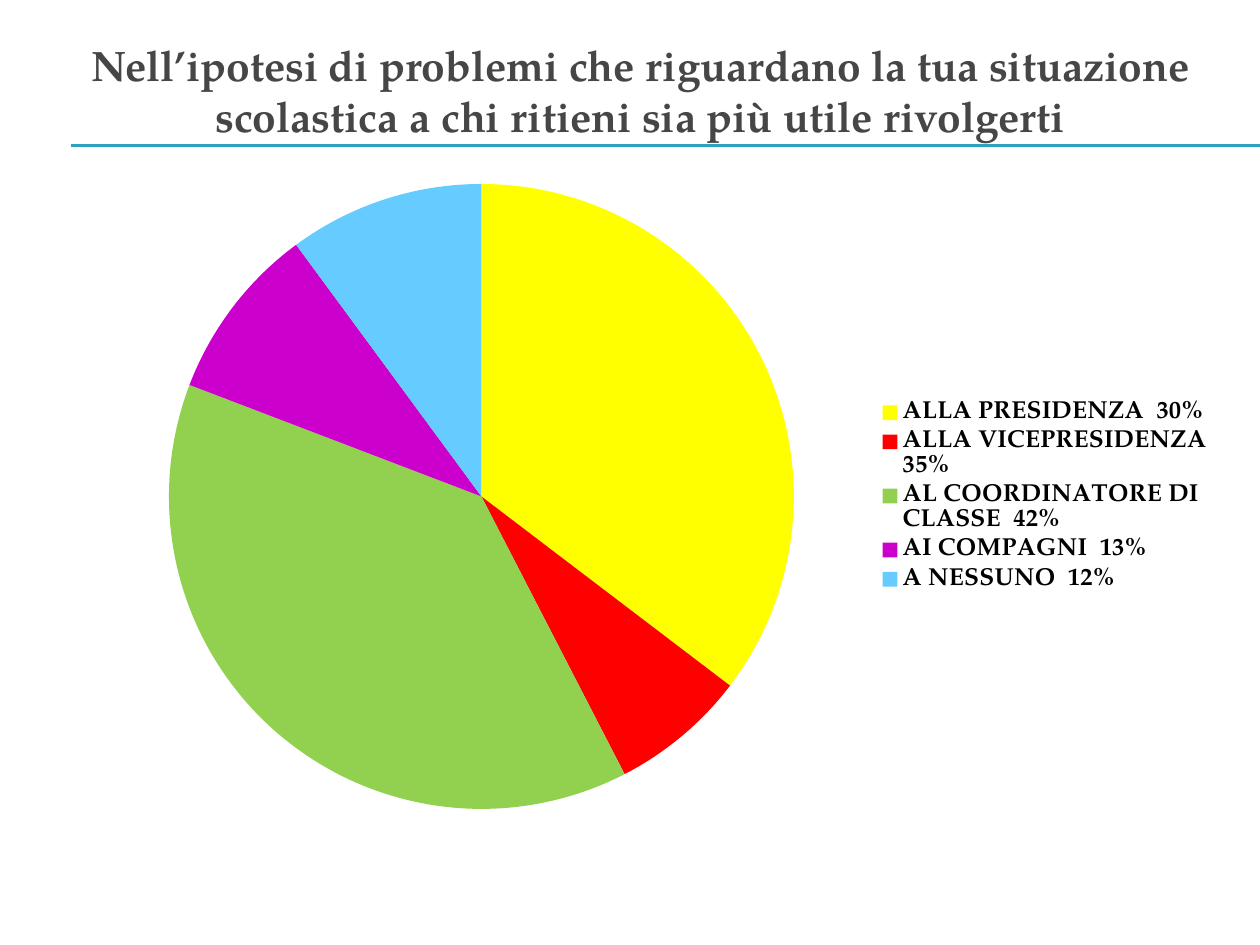
import pptx
import pptx.chart.data
import pptx.dml.color
import pptx.enum.chart
import pptx.enum.shapes
import pptx.enum.text
import pptx.oxml
import pptx.oxml.ns
import pptx.util

TITLE = ("Nell’ipotesi di problemi che riguardano la tua situazione "
         "scolastica a chi ritieni sia più utile rivolgerti")
# answer, share of the pie, slice colour
ANSWERS = [
    ("ALLA PRESIDENZA  30%", 35, "FFFF00"),
    ("ALLA VICEPRESIDENZA  35%", 7, "FF0000"),
    ("AL COORDINATORE DI CLASSE  42%", 38, "92D050"),
    ("AI COMPAGNI  13%", 9, "CC00CC"),
    ("A NESSUNO  12%", 10, "66CCFF"),
]
THEME = dict(font="TeX Gyre Pagella", title="464646", text="000000", rule="2DA2BF",
             title_pt=24.3, chart_pt=18, legend_pt=14, rule_pt=0.75)

# Boxes in px: left, top, width, height
SLIDE_W, SLIDE_H = 1260, 945
TITLE_BOX = (42, 63, 1197, 116)
TITLE_BOTTOM_INSET = 62
CHART_BOX = (88, 168, 1142, 659)
PIE_BOX = (169, 184, 625, 625)
LEGEND_BOX = (876, 396, 344, 200)
RULE_LEFT, RULE_TOPS = 71, (145, 146)


def px(length):
    return pptx.util.Emu(length * 914400 // 126)


def colour(name):
    return pptx.dml.color.RGBColor.from_string(name)


def style(font, size, ink, bold):
    font.name, font.size, font.bold = THEME["font"], pptx.util.Pt(size), bold
    font.color.rgb = colour(ink)


def layout_xml(box, target=""):
    """Manual chart layout that places a px box as fractions of the chart."""
    left, top, width, height = CHART_BOX
    fractions = dict(x=(box[0] - left) / width, y=(box[1] - top) / height,
                     w=box[2] / width, h=box[3] / height)
    modes = '<c:xMode val="edge"/><c:yMode val="edge"/>'
    places = "".join(f'<c:{key} val="{value:.4f}"/>' for key, value in fractions.items())
    return pptx.oxml.parse_xml(
        f'<c:layout {pptx.oxml.ns.nsdecls("c")}><c:manualLayout>{target}{modes}{places}'
        '</c:manualLayout></c:layout>')


def replace_layout(parent, layout, index):
    for old in parent.findall(pptx.oxml.ns.qn("c:layout")):
        parent.remove(old)
    parent.insert(index, layout)


def add_rules(slide):
    for top in RULE_TOPS:
        rule = slide.shapes.add_connector(
            pptx.enum.shapes.MSO_CONNECTOR.STRAIGHT,
            px(RULE_LEFT), px(top), px(SLIDE_W), px(top))
        rule.line.color.rgb = colour(THEME["rule"])
        rule.line.width = pptx.util.Pt(THEME["rule_pt"])
        rule._element.spPr.append(
            pptx.oxml.parse_xml(f'<a:effectLst {pptx.oxml.ns.nsdecls("a")}/>'))


def fill_title(title):
    title.left, title.top, title.width, title.height = map(px, TITLE_BOX)
    frame = title.text_frame
    frame.word_wrap = True
    frame.auto_size = pptx.enum.text.MSO_AUTO_SIZE.NONE
    frame.vertical_anchor = pptx.enum.text.MSO_ANCHOR.MIDDLE
    frame.margin_top, frame.margin_bottom = 0, px(TITLE_BOTTOM_INSET)
    question = frame.paragraphs[0]
    question.alignment = pptx.enum.text.PP_ALIGN.CENTER
    run = question.add_run()
    run.text = TITLE
    style(run.font, THEME["title_pt"], THEME["title"], True)


def add_pie(slide):
    labels, shares, colours = zip(*ANSWERS)
    data = pptx.chart.data.CategoryChartData()
    data.categories = labels
    data.add_series("Series 1", shares)
    chart = slide.shapes.add_chart(
        pptx.enum.chart.XL_CHART_TYPE.PIE, *map(px, CHART_BOX), data).chart
    chart.has_title = False
    style(chart.font, THEME["chart_pt"], THEME["text"], False)

    plot = chart.plots[0]
    plot.vary_by_categories = True
    for index, slice_colour in enumerate(colours):
        slice_format = plot.series[0].points[index].format
        slice_format.fill.solid()
        slice_format.fill.fore_color.rgb = colour(slice_colour)
        slice_format.line.fill.background()

    chart.has_legend = True
    legend = chart.legend
    legend.position = pptx.enum.chart.XL_LEGEND_POSITION.RIGHT
    legend.include_in_layout = True
    style(legend.font, THEME["legend_pt"], THEME["text"], True)

    plot_area = chart._chartSpace.chart.plotArea
    replace_layout(plot_area, layout_xml(PIE_BOX, '<c:layoutTarget val="inner"/>'), 0)
    replace_layout(legend._element, layout_xml(LEGEND_BOX), 1)


def main():
    deck = pptx.Presentation()
    deck.slide_width, deck.slide_height = px(SLIDE_W), px(SLIDE_H)
    slide = deck.slides.add_slide(deck.slide_layouts.get_by_name("Title Only"))
    add_rules(slide)
    fill_title(slide.shapes.title)
    add_pie(slide)
    deck.save("out.pptx")


if __name__ == "__main__":
    main()
